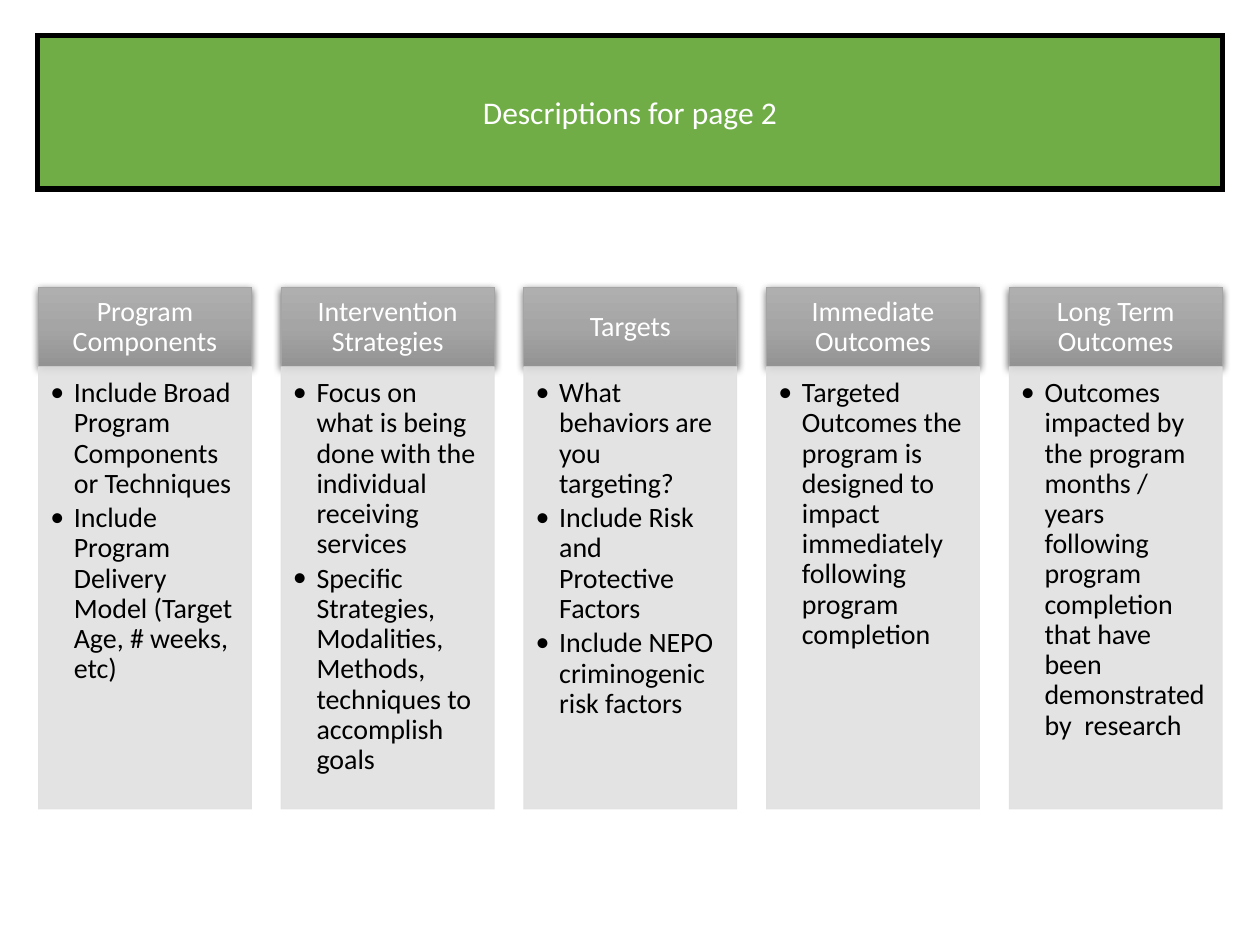
from copy import deepcopy

from lxml.etree import SubElement
from pptx import Presentation
from pptx.dml.color import RGBColor
from pptx.enum.shapes import MSO_SHAPE
from pptx.enum.text import MSO_ANCHOR, MSO_AUTO_SIZE, PP_ALIGN
from pptx.oxml.ns import qn
from pptx.util import Pt

TITLE = "Descriptions for page 2"
COLUMNS = [
    ("Program Components", [
        "Include Broad Program Components or Techniques",
        "Include Program Delivery Model (Target Age, # weeks, etc)",
    ]),
    ("Intervention Strategies", [
        "Focus on what is being done with the individual receiving services",
        "Specific Strategies, Modalities, Methods, techniques to accomplish goals",
    ]),
    ("Targets", [
        "What behaviors are you targeting?",
        "Include Risk and Protective Factors",
        "Include NEPO criminogenic risk factors",
    ]),
    ("Immediate Outcomes", [
        "Targeted Outcomes the program is designed to impact immediately "
        "following program completion",
    ]),
    ("Long Term Outcomes", [
        "Outcomes impacted by the program months / years following program "
        "completion that have been demonstrated by  research",
    ]),
]
COLORS = {
    "green": "70AD47", "black": "000000", "white": "FFFFFF", "panel": "E1E1E1",
    "light": "AFAFAF", "gray": "A5A5A5", "dark": "939393",
}
FONT = "Calibri"
LEFT, RIGHT, COLUMN_WIDTH = 22, 698.4, 121.7
HEADER_TOP, HEADER_HEIGHT, PANEL_HEIGHT = 164.2, 45.4, 252.7
BULLET_INDENT = 13.5


def color(name):
    return RGBColor.from_string(COLORS[name])


def write_text(shape, paragraphs, size=16, ink="white", align=PP_ALIGN.CENTER,
               anchor=MSO_ANCHOR.MIDDLE, insets=(7.2, 3.6, 7.2, 3.6),
               spacing=0.9, after=0, bullets=False):
    frame = shape.text_frame
    frame.word_wrap = True
    frame.auto_size = MSO_AUTO_SIZE.NONE
    frame.vertical_anchor = anchor
    (frame.margin_left, frame.margin_top,
     frame.margin_right, frame.margin_bottom) = map(Pt, insets)
    for index, text in enumerate(paragraphs):
        para = frame.add_paragraph() if index else frame.paragraphs[0]
        para.alignment = align
        para.line_spacing = spacing
        para.space_before = Pt(0)
        para.space_after = Pt(after)
        span = para.add_run()
        span.text = text
        span.font.name = FONT
        span.font.size = Pt(size)
        span.font.color.rgb = color(ink)
        if bullets:
            properties = para._p.get_or_add_pPr()
            properties.set("marL", str(Pt(BULLET_INDENT)))
            properties.set("indent", str(-Pt(BULLET_INDENT)))
            SubElement(properties, qn("a:buFont"), typeface=FONT)
            SubElement(properties, qn("a:buChar"), char="•")


def outline(shape, name, width):
    shape.line.color.rgb = color(name)
    shape.line.width = Pt(width)
    SubElement(shape._element.spPr.find(qn("a:ln")), qn("a:miter"), lim="800000")


def add_box(page, left, top, height, line):
    box = page.shapes.add_shape(MSO_SHAPE.RECTANGLE, Pt(left), Pt(top),
                                Pt(COLUMN_WIDTH), Pt(height))
    box.shadow.inherit = False
    outline(box, line, 0.5)
    return box


def shade_header(box):
    box.fill.gradient()
    box.fill.gradient_angle = 270
    stop_list = box._element.spPr.find(".//" + qn("a:gsLst"))
    stop_list.insert(1, deepcopy(stop_list[0]))
    for stop, position, name in zip(box.fill.gradient_stops, (0, 0.5, 1),
                                    ("light", "gray", "dark")):
        stop.position = position
        stop.color.rgb = color(name)
    effects = box._element.spPr.find(qn("a:effectLst"))
    shadow = SubElement(effects, qn("a:outerShdw"), blurRad=str(Pt(4.5)),
                        dist=str(Pt(1.5)), dir="5400000", algn="ctr",
                        rotWithShape="0")
    tint = SubElement(shadow, qn("a:srgbClr"), val=COLORS["black"])
    SubElement(tint, qn("a:alpha"), val="63000")


def fill_panel(box):
    box.fill.solid()
    box.fill.fore_color.rgb = color("panel")
    for tint in box._element.spPr.iter(qn("a:srgbClr")):
        SubElement(tint, qn("a:alpha"), val="90000")


def main():
    deck = Presentation()
    deck.slide_width, deck.slide_height = Pt(720), Pt(540)
    page = deck.slides.add_slide(deck.slide_layouts.get_by_name("Title Only"))

    title = page.shapes.title
    title.left, title.top = Pt(21.6), Pt(20.2)
    title.width, title.height = Pt(676.8), Pt(87.8)
    title.fill.solid()
    title.fill.fore_color.rgb = color("green")
    outline(title, "black", 3)
    write_text(title, [TITLE], size=18, spacing=1.0)

    step = (RIGHT - LEFT - COLUMN_WIDTH) / (len(COLUMNS) - 1)
    for index, (heading, items) in enumerate(COLUMNS):
        left = LEFT + index * step
        header = add_box(page, left, HEADER_TOP, HEADER_HEIGHT, "gray")
        shade_header(header)
        write_text(header, [heading], insets=(8.96, 5.12, 8.96, 5.12))
        panel = add_box(page, left, HEADER_TOP + HEADER_HEIGHT, PANEL_HEIGHT, "panel")
        fill_panel(panel)
        write_text(panel, items, ink="black", align=PP_ALIGN.LEFT,
                   anchor=MSO_ANCHOR.TOP, insets=(6.72, 6.72, 8.96, 10.08),
                   after=2.4, bullets=True)

    deck.save("out.pptx")


if __name__ == "__main__":
    main()
